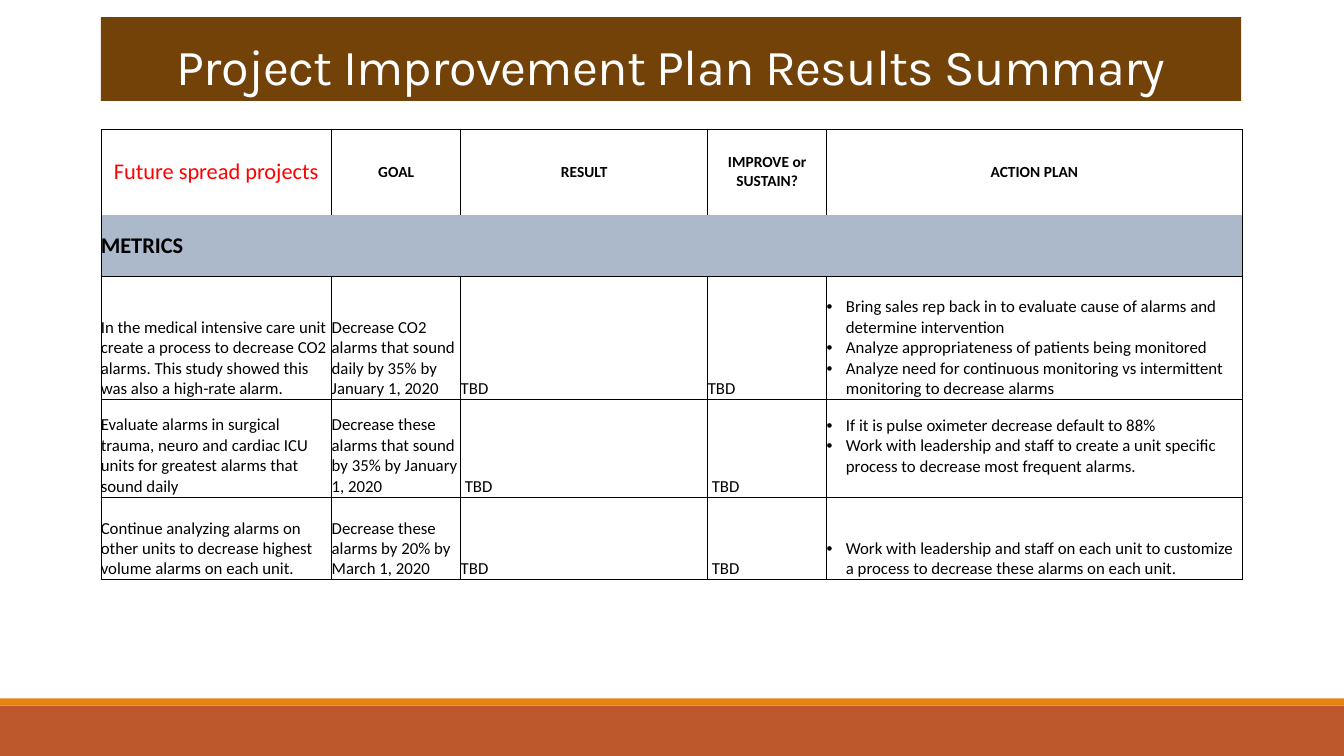
from lxml import etree
from pptx import Presentation
from pptx.dml.color import RGBColor
from pptx.enum.shapes import MSO_SHAPE as Shape
from pptx.enum.text import MSO_ANCHOR as Anchor, MSO_AUTO_SIZE as AutoSize, PP_ALIGN as Align
from pptx.oxml.ns import qn
from pptx.util import Inches, Pt

COLORS = {
    "rust": "BD582C", "orange": "E48312", "brown": "724209", "metrics": "ACB9CA",
    "black": "000000", "white": "FFFFFF", "red": "FF0000",
}


def write_text(frame, text, size=12, font="Calibri", color="black", bold=False,
               align=Align.LEFT, spacing=1.0, bullets=False):
    for index, line in enumerate(text.split("\n")):
        para = frame.paragraphs[0] if index == 0 else frame.add_paragraph()
        para.alignment = align
        para.line_spacing = spacing
        span = para.add_run()
        span.text = line
        span.font.size = Pt(size)
        span.font.name = font
        span.font.bold = bold
        span.font.color.rgb = RGBColor.from_string(COLORS[color])
        if bullets:
            props = para._p.get_or_add_pPr()
            props.set("marL", str(Inches(0.19)))
            props.set("indent", str(Inches(-0.19)))
            etree.SubElement(props, qn("a:buFont"), typeface="Arial")
            etree.SubElement(props, qn("a:buChar"), char="•")


def set_borders(cell, sides):
    props = cell._tc.get_or_add_tcPr()
    for index, side in enumerate("LRTB"):
        line = etree.Element(qn(f"a:ln{side}"), w=str(Pt(0.5)))
        if side in sides:
            fill = etree.SubElement(line, qn("a:solidFill"))
            etree.SubElement(fill, qn("a:srgbClr"), val=COLORS["black"])
        else:
            etree.SubElement(line, qn("a:noFill"))
        props.insert(index, line)


deck = Presentation()
deck.slide_width = Inches(13.33)
deck.slide_height = Inches(7.5)
page = deck.slides.add_slide(deck.slide_layouts[5])

for top, height, color in [(7, 0.5, "rust"), (6.93, 0.07, "orange")]:
    band = page.shapes.add_shape(Shape.RECTANGLE, 0, Inches(top), Inches(13.33), Inches(height))
    band.shadow.inherit = False
    band.fill.solid()
    band.fill.fore_color.rgb = RGBColor.from_string(COLORS[color])
    band.line.fill.background()

title = page.shapes.title
title.left, title.top = Inches(1), Inches(0.17)
title.width, title.height = Inches(11.31), Inches(0.83)
title.fill.solid()
title.fill.fore_color.rgb = RGBColor.from_string(COLORS["brown"])
title.text_frame.word_wrap = True
title.text_frame.auto_size = AutoSize.NONE
title.text_frame.vertical_anchor = Anchor.BOTTOM
write_text(title.text_frame, "Project Improvement Plan Results Summary", size=36,
           font="Karla", color="white", align=Align.CENTER, spacing=0.85)
title.text_frame.paragraphs[0].runs[0].font._element.set("spc", "-50")

ROWS = [
    ["Future spread projects", "GOAL", "RESULT", "IMPROVE or SUSTAIN?", "ACTION PLAN"],
    ["METRICS", "", "", "", ""],
    ["In the medical intensive care unit create a process to decrease CO2 alarms. "
     "This study showed this was also a high-rate alarm.",
     "Decrease CO2 alarms that sound daily by 35% by January 1, 2020",
     "TBD", "TBD",
     "Bring sales rep back in to evaluate cause of alarms and determine intervention\n"
     "Analyze appropriateness of patients being monitored\n"
     "Analyze need for continuous monitoring vs intermittent monitoring to decrease alarms"],
    ["Evaluate alarms in surgical trauma, neuro and cardiac ICU units for greatest alarms "
     "that sound daily",
     "Decrease these alarms that sound by 35% by January 1, 2020",
     "TBD", "TBD",
     "If it is pulse oximeter decrease default to 88%\n"
     "Work with leadership and staff to create a unit specific process to decrease "
     "most frequent alarms."],
    ["Continue analyzing alarms on other units to decrease highest volume alarms on each unit.",
     "Decrease these alarms by 20% by March 1, 2020",
     "TBD", "TBD",
     "Work with leadership and staff on each unit to customize a process to decrease "
     "these alarms on each unit."],
]
COLUMN_WIDTHS = [2.29, 1.28, 2.45, 1.18, 4.12]
ROW_HEIGHTS = [0.85, 0.61, 1.22, 0.97, 0.82]
INDENTED = [(3, 2), (3, 3), (4, 3)]

table = page.shapes.add_table(len(ROWS), len(COLUMN_WIDTHS), Inches(1), Inches(1.28),
                              Inches(11.31), Inches(4.47)).table
table.first_row = False
table.horz_banding = False
for column, width in zip(table.columns, COLUMN_WIDTHS):
    column.width = Inches(width)
for row, height in zip(table.rows, ROW_HEIGHTS):
    row.height = Inches(height)
table.cell(1, 0).merge(table.cell(1, 4))

for r, texts in enumerate(ROWS):
    for c, text in enumerate(texts):
        cell = table.cell(r, c)
        cell.margin_left = Inches(0.04 if (r, c) in INDENTED else 0)
        cell.margin_right = cell.margin_top = 0
        cell.margin_bottom = Inches(0.2 if (r, c) == (3, 4) else 0)
        cell.vertical_anchor = Anchor.MIDDLE if r < 2 else Anchor.BOTTOM
        cell.fill.background()
        sides = "LRT" if r == 0 else "LRTB"
        if r == 1:
            cell.fill.solid()
            cell.fill.fore_color.rgb = RGBColor.from_string(COLORS["metrics"])
            sides = {0: "LRB", 4: "RB"}.get(c, "B")
        set_borders(cell, sides)
        if not text:
            continue
        if (r, c) == (0, 0):
            write_text(cell.text_frame, text, size=16, color="red", align=Align.CENTER)
        elif r == 0:
            write_text(cell.text_frame, text, size=11, bold=True, align=Align.CENTER)
        elif r == 1:
            write_text(cell.text_frame, text, size=16, bold=True)
        else:
            write_text(cell.text_frame, text, bullets=c == 4)

deck.save("out.pptx")
